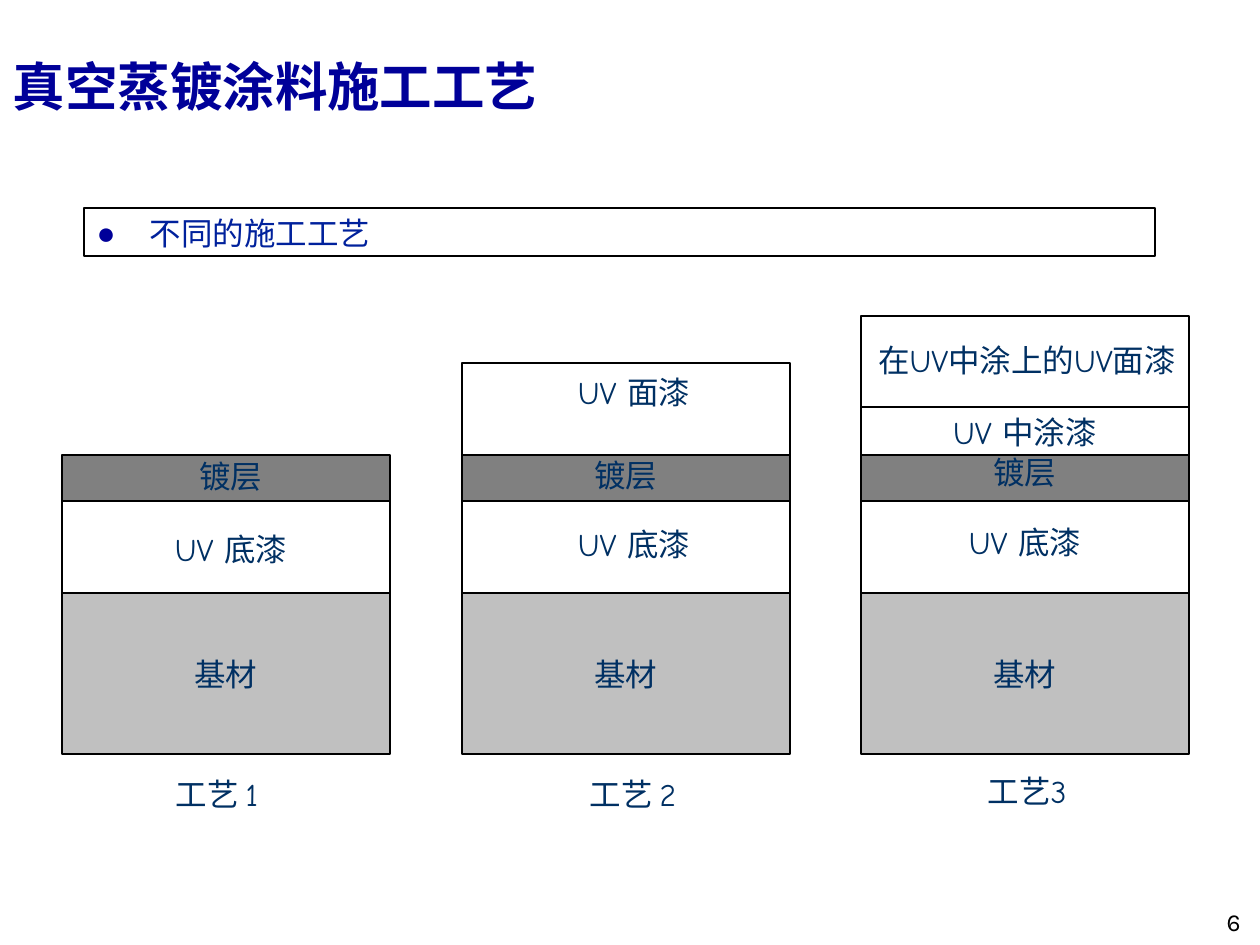
import pptx
import pptx.util
import pptx.dml.color
import pptx.enum.shapes
import pptx.enum.text
import pptx.oxml
import pptx.oxml.ns

PX = 914400 / 126
ALIGN = pptx.enum.text.PP_ALIGN
ANCHOR = pptx.enum.text.MSO_ANCHOR

THEME = {
    "title": {"name": "Karla", "size": 30, "bold": True, "color": "000099"},
    "body": {"name": "Karla", "size": 18, "bold": False, "color": "00219C"},
    "label": {"name": "Comic Neue", "size": 18, "bold": False, "color": "003063"},
    "number": {"name": "Karla", "size": 14, "bold": False, "color": "000000"},
    "line": "000000",
    "paper": "FFFFFF",
    "plating": "808080",
    "substrate": "C0C0C0",
}


def box(*lengths):
    return [round(length * PX) for length in lengths]


def write(holder, text, style, align, anchor=ANCHOR.TOP, wrap=True):
    frame = holder.text_frame
    frame.text = text
    settings = {"word_wrap": wrap, "vertical_anchor": anchor,
                "auto_size": pptx.enum.text.MSO_AUTO_SIZE.NONE}
    for key, value in settings.items():
        setattr(frame, key, value)
    paragraph = frame.paragraphs[0]
    paragraph.alignment = align
    paragraph.space_before = pptx.util.Pt(0)
    font = paragraph.runs[0].font
    for key, value in THEME[style].items():
        if key == "color":
            font.color.rgb = pptx.dml.color.RGBColor.from_string(value)
        else:
            setattr(font, key, pptx.util.Pt(value) if key == "size" else value)
    return paragraph


deck = pptx.Presentation()
deck.slide_width, deck.slide_height = box(1260, 945)
slide = deck.slides.add_slide(deck.slide_layouts[1])
black = pptx.dml.color.RGBColor.from_string(THEME["line"])

# Title
title = slide.shapes.title
title.left, title.top, title.width, title.height = box(0, 45, 1067, 81)
write(title, "真空蒸镀涂料施工工艺", "title", ALIGN.LEFT, ANCHOR.MIDDLE)

# Framed bullet
topic = slide.placeholders[1]
topic.left, topic.top, topic.width, topic.height = box(84, 208, 1071, 48)
topic.fill.solid()
topic.fill.fore_color.rgb = pptx.dml.color.RGBColor.from_string(THEME["paper"])
topic.line.color.rgb = black
topic.line.width = pptx.util.Pt(0.75)
bullet = write(topic, "不同的施工工艺", "body", ALIGN.LEFT)
bullet_format = bullet._p.get_or_add_pPr()
indent = round(53 * PX)
bullet_format.set("marL", str(indent))
bullet_format.set("indent", str(-indent))
namespace = pptx.oxml.ns.nsdecls("a")
for mark in (
    f'<a:buClr {namespace}><a:srgbClr val="{THEME["title"]["color"]}"/></a:buClr>',
    f'<a:buChar {namespace} char="●"/>',
):
    bullet_format.append(pptx.oxml.parse_xml(mark))

# Processes: left edge, layers from the bottom up (height, fill),
# labels (text, centre, top)
LAYER_WIDTH, STACK_BOTTOM, LABEL_HEIGHT = 328, 754, 49
common_layers = [(161, "substrate"), (92, None), (46, "plating")]
processes = [
    (62, [], [("镀层", 231, 451), ("UV 底漆", 231, 524), ("工艺 1", 217, 769)]),
    (462, [(92, None)],
     [("UV 面漆", 634, 367), ("镀层", 626, 450), ("UV 底漆", 634, 519),
      ("工艺 2", 633, 769)]),
    (861, [(48, None), (91, None)],
     [("在UV中涂上的UV面漆", 1027, 335), ("UV 中涂漆", 1025, 407),
      ("镀层", 1025, 447), ("UV 底漆", 1025, 517), ("工艺3", 1027, 766)]),
]
for left, extra_layers, labels in processes:
    top = STACK_BOTTOM
    for height, fill in common_layers + extra_layers:
        top -= height
        layer = slide.shapes.add_shape(pptx.enum.shapes.MSO_SHAPE.RECTANGLE,
                                       *box(left, top, LAYER_WIDTH, height))
        layer.shadow.inherit = False
        layer.line.color.rgb = black
        layer.line.width = pptx.util.Pt(0.75)
        if fill:
            layer.fill.solid()
            layer.fill.fore_color.rgb = pptx.dml.color.RGBColor.from_string(THEME[fill])
        else:
            layer.fill.background()
        if fill == "substrate":
            write(layer, "基材", "label", ALIGN.CENTER, ANCHOR.MIDDLE)

    for text, centre, label_top in labels:
        label = slide.shapes.add_textbox(
            *box(centre - LAYER_WIDTH / 2, label_top, LAYER_WIDTH, LABEL_HEIGHT))
        write(label, text, "label", ALIGN.CENTER, wrap=False)

# Page number
page = slide.shapes.add_textbox(*box(1199, 901, 54, 42))
write(page, "6", "number", ALIGN.RIGHT, wrap=False)

deck.save("out.pptx")
